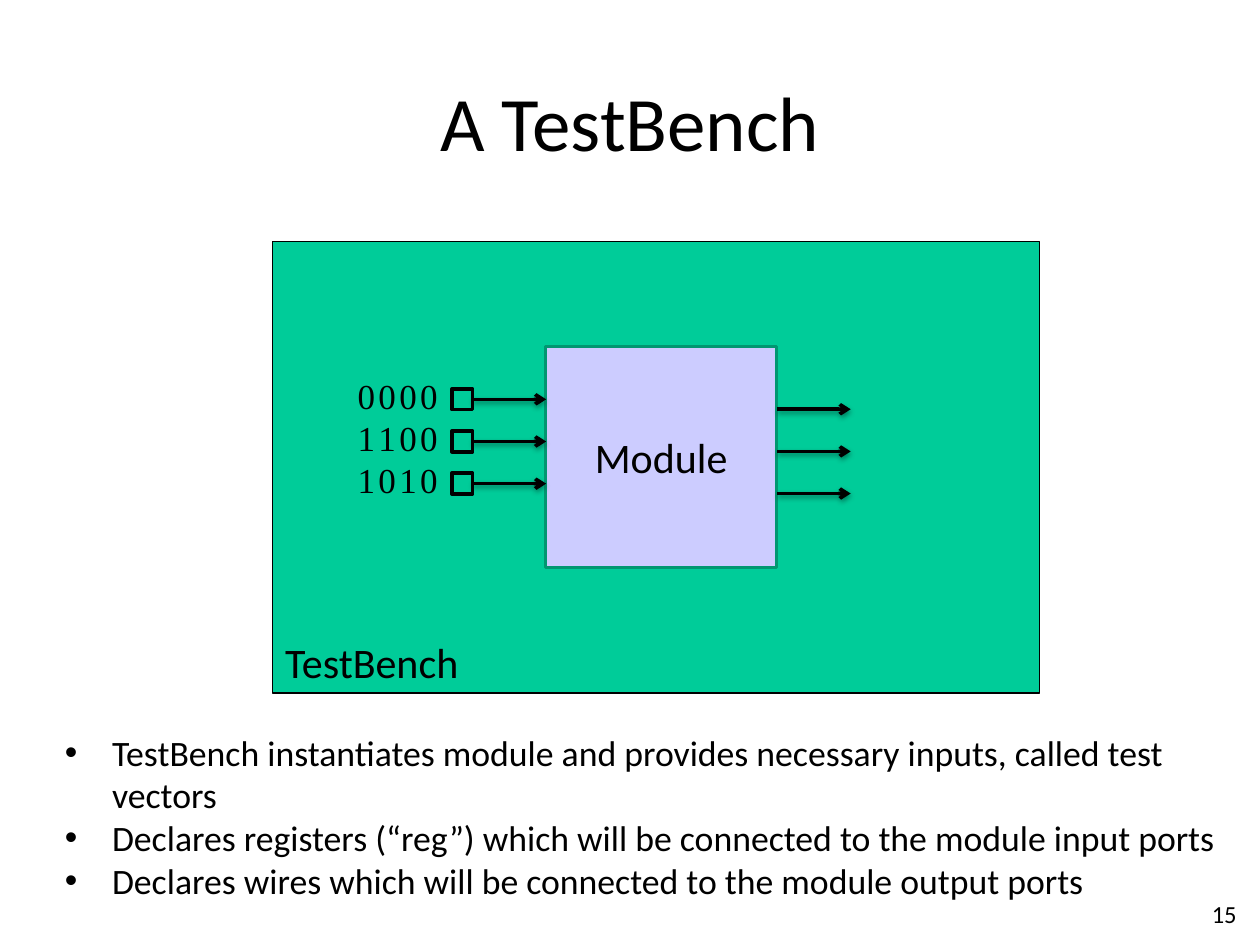
from dataclasses import dataclass
from typing import Optional

from lxml.etree import SubElement
from pptx import Presentation
from pptx.dml.color import RGBColor
from pptx.enum.shapes import MSO_CONNECTOR, MSO_SHAPE
from pptx.enum.text import MSO_ANCHOR, PP_ALIGN
from pptx.oxml import parse_xml
from pptx.oxml.ns import nsdecls, qn
from pptx.util import Cm, Pt

BLACK = RGBColor(0x00, 0x00, 0x00)
GREEN = RGBColor(0x00, 0xCC, 0x99)
DARK_GREEN = RGBColor(0x00, 0x97, 0x71)
LAVENDER = RGBColor(0xCC, 0xCC, 0xFF)
SANS = "Calibri"
SERIF = "Times New Roman"

PORT_PITCH = 0.85
REGISTER_SIZE = 0.42
ARROW_LENGTH = 1.48
VECTORS = ["0000", "1100", "1010"]
DUTIES = [
    "TestBench instantiates module and provides necessary inputs, called test vectors",
    "Declares registers (“reg”) which will be connected to the module input ports",
    "Declares wires which will be connected to the module output ports",
]


@dataclass
class Box:
    """A place on the slide, in centimetres."""
    left: float
    top: float
    width: float
    height: float

    def lengths(self) -> tuple:
        return Cm(self.left), Cm(self.top), Cm(self.width), Cm(self.height)


@dataclass
class PortGroup:
    """The arrows on one side of the module."""
    left: float
    first_y: float


INPUTS = PortGroup(9.53, 8.05)
OUTPUTS = PortGroup(15.67, 8.25)


def add_run(paragraph, text: str, size: float, font: str = SANS) -> None:
    run = paragraph.add_run()
    run.text = text
    run.font.size = Pt(size)
    run.font.name = font
    run.font.color.rgb = BLACK


def add_rect(slide, box: Box, fill: Optional[RGBColor], line: RGBColor, weight: float):
    rect = slide.shapes.add_shape(MSO_SHAPE.RECTANGLE, *box.lengths())
    rect.shadow.inherit = False
    if fill is None:
        rect.fill.background()
    else:
        rect.fill.solid()
        rect.fill.fore_color.rgb = fill
    rect.line.color.rgb = line
    rect.line.width = Pt(weight)
    return rect


def add_text_frame(slide, box: Box, wrap: bool = True):
    frame = slide.shapes.add_textbox(*box.lengths()).text_frame
    frame.word_wrap = wrap
    return frame


def add_arrow(slide, left: float, y: float) -> None:
    arrow = slide.shapes.add_connector(
        MSO_CONNECTOR.STRAIGHT, Cm(left), Cm(y), Cm(left + ARROW_LENGTH), Cm(y))
    arrow.line.color.rgb = BLACK
    arrow.line.width = Pt(2)
    SubElement(arrow.line._get_or_add_ln(), qn("a:tailEnd"), type="arrow")
    arrow._element.spPr.append(parse_xml(
        f'<a:effectLst {nsdecls("a")}>'
        f'<a:outerShdw blurRad="{Pt(3.1)}" dist="{Pt(1.6)}" dir="5400000" rotWithShape="0">'
        '<a:srgbClr val="000000"><a:alpha val="38000"/></a:srgbClr>'
        '</a:outerShdw></a:effectLst>'))


def add_bullet(paragraph, text: str) -> None:
    properties = paragraph._p.get_or_add_pPr()
    properties.set("marL", str(Cm(0.95)))
    properties.set("indent", str(Cm(-0.95)))
    SubElement(properties, qn("a:buFont"), typeface="Arial")
    SubElement(properties, qn("a:buChar"), char="•")
    add_run(paragraph, text, 20.4)


def add_bit_column(slide, left: float, bits: tuple) -> None:
    """One bit of every test vector, stacked."""
    frame = add_text_frame(slide, Box(left, 7.42, 0.86, 2.82), wrap=False)
    upper = frame.paragraphs[0]
    add_run(upper, bits[0], 20, SERIF)
    upper.add_line_break()
    add_run(upper, bits[1], 20, SERIF)
    add_run(frame.add_paragraph(), bits[2], 20, SERIF)


def main() -> None:
    presentation = Presentation()
    presentation.slide_width, presentation.slide_height = Cm(25.4), Cm(19.05)
    slide = presentation.slides.add_slide(presentation.slide_layouts[5])

    # Title
    title = slide.shapes.title
    title.left, title.top, title.width, title.height = Box(1.9, 0.85, 21.6, 3.18).lengths()
    title.text_frame.vertical_anchor = MSO_ANCHOR.MIDDLE
    heading = title.text_frame.paragraphs[0]
    heading.alignment = PP_ALIGN.CENTER
    add_run(heading, "A TestBench", 44)

    # Test bench and its label
    add_rect(slide, Box(5.5, 4.87, 15.45, 9.1), GREEN, BLACK, 0.75)
    bench_label = add_text_frame(slide, Box(5.5, 12.7, 4.1, 1.27), wrap=False)
    add_run(bench_label.paragraphs[0], "TestBench", 24)

    # Module under test
    module = add_rect(slide, Box(11, 6.99, 4.66, 4.45), LAVENDER, DARK_GREEN, 2)
    module.text_frame.vertical_anchor = MSO_ANCHOR.MIDDLE
    module_label = module.text_frame.paragraphs[0]
    module_label.alignment = PP_ALIGN.CENTER
    add_run(module_label, "Module", 24)

    # Ports and input registers
    for port in range(len(VECTORS)):
        offset = port * PORT_PITCH
        for group in (INPUTS, OUTPUTS):
            add_arrow(slide, group.left, group.first_y + offset)
        register_top = INPUTS.first_y + offset - REGISTER_SIZE / 2
        add_rect(slide, Box(INPUTS.left - REGISTER_SIZE, register_top,
                            REGISTER_SIZE, REGISTER_SIZE), None, BLACK, 2)

    # Test vectors, one column per bit
    for column, bits in enumerate(zip(*VECTORS)):
        add_bit_column(slide, 6.96 + column * 0.42, bits)

    # Duties of the test bench
    duties = add_text_frame(slide, Box(1.06, 14.6, 23.7, 3.39))
    for number, duty in enumerate(DUTIES):
        add_bullet(duties.add_paragraph() if number else duties.paragraphs[0], duty)

    # Slide number
    page = add_text_frame(slide, Box(19.9, 17.99, 5.28, 1.27)).paragraphs[0]
    page.alignment = PP_ALIGN.RIGHT
    add_run(page, "15", 14)

    presentation.save("out.pptx")


if __name__ == "__main__":
    main()
